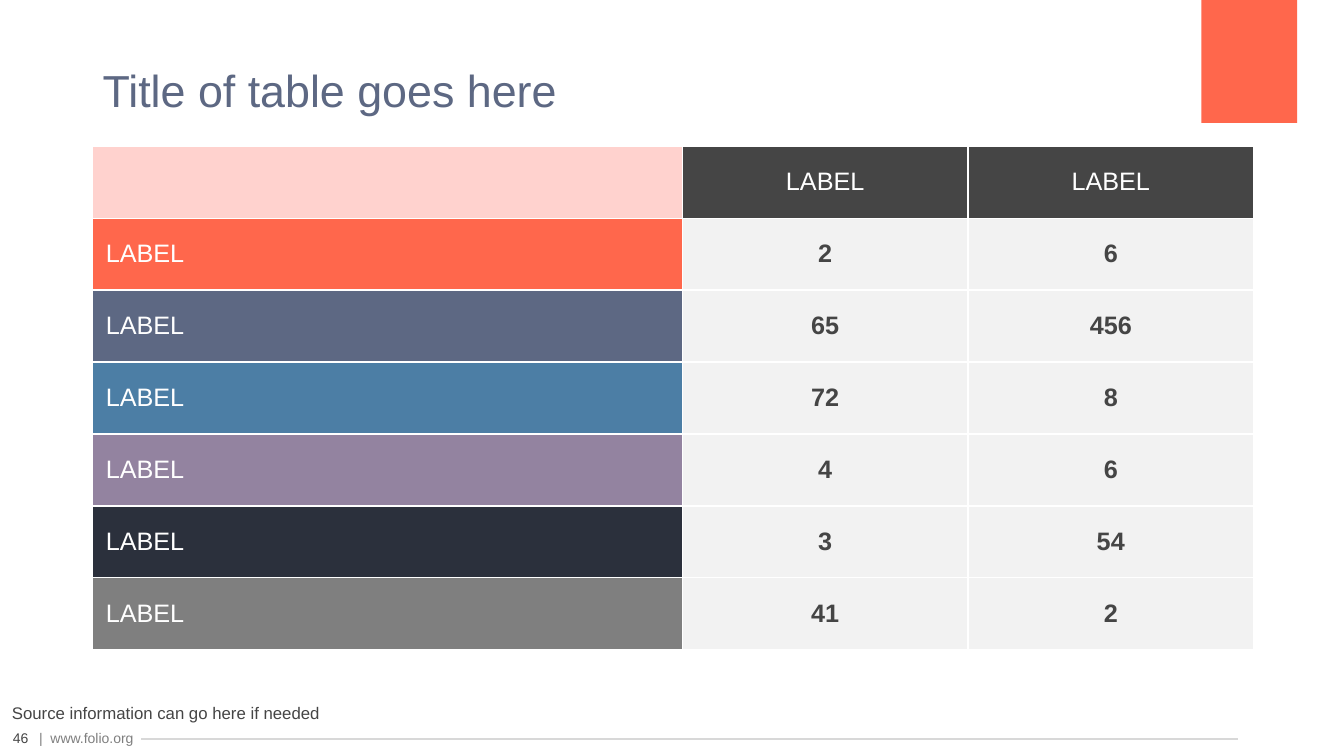
from dataclasses import dataclass, field

from lxml.etree import SubElement as Sub
from pptx import Presentation
from pptx.dml.color import RGBColor as RGB
from pptx.enum.shapes import MSO_CONNECTOR as Link, MSO_SHAPE as Kind
from pptx.enum.text import MSO_ANCHOR as Anchor, PP_ALIGN as Align
from pptx.oxml.ns import qn
from pptx.util import Emu, Inches, Pt

HUES = {
    "white": "FFFFFF", "dark": "454545", "grey": "7F7F7F", "rule": "D8D8D8",
    "pale": "F2F2F2", "pink": "FFD2CE", "coral": "FF674C", "slate": "5D6883",
    "blue": "4C7EA5", "mauve": "9383A0", "navy": "2B303C",
}

# The slide is a grid of 160 columns by 90 rows
COLS, ROWS = 160, 90
WIDE, HIGH = Inches(13.33), Inches(7.5)


def col(num: float) -> Emu:
    return Emu(round(WIDE * num / COLS))


def row(num: float) -> Emu:
    return Emu(round(HIGH * num / ROWS))


@dataclass
class Box:
    x: float
    y: float
    w: float
    h: float

    def place(self) -> tuple:
        return col(self.x), row(self.y), col(self.w), row(self.h)


@dataclass
class Label:
    text: str
    box: Box
    size: int
    hue: str
    anchor: Anchor = Anchor.TOP
    form: dict = field(default_factory=dict)


@dataclass
class Line:
    hue: str
    vals: tuple


LABELS = [
    Label("|  www.folio.org", Box(3.48, 86.28, 23.28, 3.24), 10, "grey"),
    Label("46", Box(-0.48, 86.28, 5.88, 3.24), 10, "dark", Anchor.MIDDLE,
          {"alignment": Align.CENTER}),
    Label("Title of table goes here", Box(11.04, 6.24, 138, 13.44), 32, "slate",
          form={"line_spacing": 1.1}),
    Label("Source information can go here if needed",
          Box(0.24, 82.44, 47.88, 4.2), 12, "dark", Anchor.BOTTOM,
          {"line_spacing": 1.1}),
]
LINES = [
    Line("coral", (2, 6)), Line("slate", (65, 456)), Line("blue", (72, 8)),
    Line("mauve", (4, 6)), Line("navy", (3, 54)), Line("grey", (41, 2)),
]
SPANS = (70.2, 34, 34)
STEP = 8.57


def rgb(hue: str) -> RGB:
    return RGB.from_string(HUES[hue])


def apply(item, form: dict) -> None:
    for name, val in form.items():
        setattr(item, name, val)


def write(par, text: str, size: int, hue: str, bold: bool = False) -> None:
    run = par.add_run()
    run.text = text
    apply(run.font, {"name": "Arial", "size": Pt(size), "bold": bold})
    run.font.color.rgb = rgb(hue)


def add_label(slide, item: Label) -> None:
    frame = slide.shapes.add_textbox(*item.box.place()).text_frame
    apply(frame, {"word_wrap": True, "vertical_anchor": item.anchor})
    par = frame.paragraphs[0]
    apply(par, item.form)
    write(par, item.text, item.size, item.hue)


def add_block(slide, box: Box, hue: str) -> None:
    block = slide.shapes.add_shape(Kind.RECTANGLE, *box.place())
    block.shadow.inherit = False
    block.fill.solid()
    block.fill.fore_color.rgb = rgb(hue)
    block.line.fill.background()


def add_rule(slide, x: float, end: float, y: float) -> None:
    rule = slide.shapes.add_connector(
        Link.STRAIGHT, col(x), row(y), col(end), row(y))
    rule.line.color.rgb = rgb("rule")
    rule.line.width = Pt(1)
    Sub(rule._element.spPr, qn("a:effectLst"))


def fill_cell(cell, text: str, back: str, hue: str, align: Align,
              bold: bool) -> None:
    # Borders come before the fill in the cell's XML
    props = cell._tc.get_or_add_tcPr()
    for side in ("lnL", "lnR", "lnT", "lnB"):
        edge = Sub(props, qn(f"a:{side}"), w=str(Pt(1)))
        Sub(Sub(edge, qn("a:solidFill")), qn("a:srgbClr"), val=HUES["white"])
    cell.fill.solid()
    cell.fill.fore_color.rgb = rgb(back)
    apply(cell, {"vertical_anchor": Anchor.MIDDLE,
                 "margin_left": Inches(0.13), "margin_right": Inches(0.13)})
    if text:
        par = cell.text_frame.paragraphs[0]
        par.alignment = align
        write(par, text, 18, hue, bold)


def add_grid(slide) -> None:
    count = len(LINES) + 1
    box = Box(11.04, 17.4, sum(SPANS), STEP * count)
    grid = slide.shapes.add_table(count, len(SPANS), *box.place()).table
    apply(grid, {"first_row": False, "horz_banding": False})
    for part, span in zip(grid.columns, SPANS):
        part.width = col(span)
    for part in grid.rows:
        part.height = row(STEP)

    # Head row
    for x in range(len(SPANS)):
        text, back = ("LABEL", "dark") if x else ("", "pink")
        fill_cell(grid.cell(0, x), text, back, "white", Align.CENTER, False)

    # Body rows
    for y, line in enumerate(LINES, 1):
        fill_cell(grid.cell(y, 0), "LABEL", line.hue, "white", Align.LEFT, False)
        for x, val in enumerate(line.vals, 1):
            fill_cell(grid.cell(y, x), str(val), "pale", "dark",
                      Align.CENTER, True)


def main() -> None:
    deck = Presentation()
    apply(deck, {"slide_width": WIDE, "slide_height": HIGH})
    slide = deck.slides.add_slide(deck.slide_layouts[6])

    # Footer rule and corner block
    add_rule(slide, 16.8, 147.36, 87.96)
    add_block(slide, Box(143.04, 0, 11.4, 14.64), "coral")

    # Texts and table
    for item in LABELS:
        add_label(slide, item)
    add_grid(slide)
    deck.save("out.pptx")


if __name__ == "__main__":
    main()
